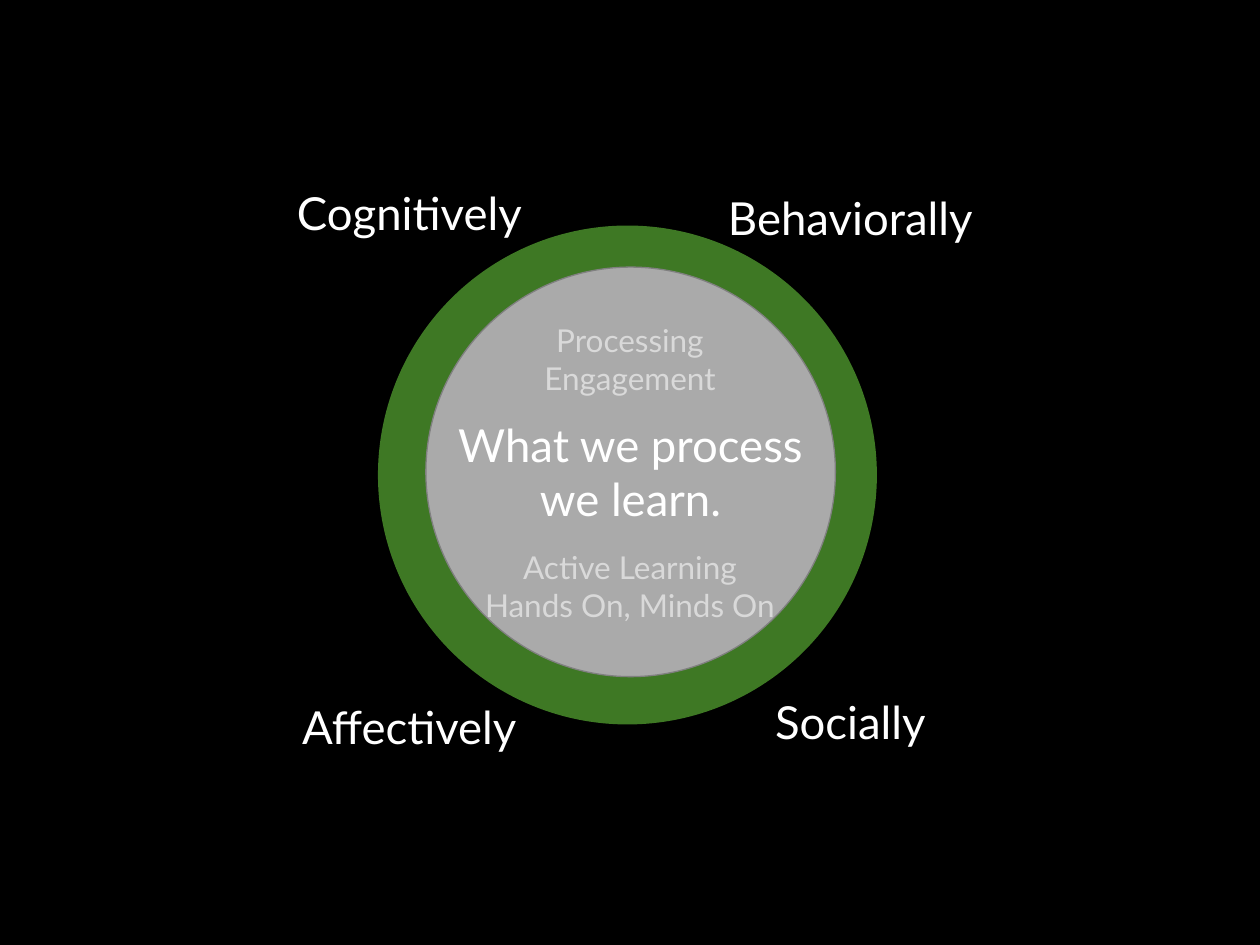
from dataclasses import dataclass

from pptx import Presentation
from pptx.dml.color import RGBColor
from pptx.enum.shapes import MSO_SHAPE
from pptx.enum.text import PP_ALIGN
from pptx.util import Inches, Pt


@dataclass(frozen=True)
class Theme:
    font: str = "Lato"
    background: str = "000000"
    ring: str = "3E7824"
    core: str = "AAAAAA"
    core_edge: str = "808080"
    strong: str = "FFFFFF"
    muted: str = "D9D9D9"
    large: int = 26
    small: int = 18


class SlideBuilder:
    def __init__(self, page, theme):
        self.page = page
        self.theme = theme

    def background(self):
        fill = self.page.background.fill
        fill.solid()
        fill.fore_color.rgb = RGBColor.from_string(self.theme.background)

    def circle(self, left, top, diameter, color, edge=None):
        shape = self.page.shapes.add_shape(
            MSO_SHAPE.OVAL, Inches(left), Inches(top), Inches(diameter), Inches(diameter)
        )
        shape.shadow.inherit = False
        shape.fill.solid()
        shape.fill.fore_color.rgb = RGBColor.from_string(color)
        if edge:
            shape.line.color.rgb = RGBColor.from_string(edge)
            shape.line.width = Pt(0.75)
        else:
            shape.line.fill.background()

    def text(self, left, top, width, height, lines, size, color):
        box = self.page.shapes.add_textbox(
            Inches(left), Inches(top), Inches(width), Inches(height)
        )
        frame = box.text_frame
        frame.word_wrap = True
        frame.text = "\n".join(lines)
        for para in frame.paragraphs:
            para.alignment = PP_ALIGN.CENTER
            para.font.name = self.theme.font
            para.font.size = Pt(size)
            para.font.color.rgb = RGBColor.from_string(color)
        return frame


def main():
    deck = Presentation()
    deck.slide_width = Inches(10)
    deck.slide_height = Inches(7.5)
    theme = Theme()
    builder = SlideBuilder(deck.slides.add_slide(deck.slide_layouts[6]), theme)

    builder.background()
    builder.circle(3, 1.79, 3.96, theme.ring)
    builder.circle(3.38, 2.12, 3.25, theme.core, theme.core_edge)

    captions = builder.text(
        0, 2.5, 10, 2.52,
        ["Processing", "Engagement", "Active Learning", "Hands On, Minds On"],
        theme.small, theme.muted,
    )
    captions.paragraphs[2].space_before = Pt(86.4)

    dimensions = [
        ("Cognitively", 1.75, 1.42),
        ("Socially", 5.25, 5.46),
        ("Behaviorally", 5.25, 1.46),
        ("Affectively", 1.75, 5.5),
    ]
    for label, left, top in dimensions:
        builder.text(left, top, 3, 0.54, [label], theme.large, theme.strong)

    builder.text(
        3.42, 3.26, 3.17, 0.98, ["What we process", "we learn."],
        theme.large, theme.strong,
    )

    deck.save("out.pptx")


if __name__ == "__main__":
    main()
